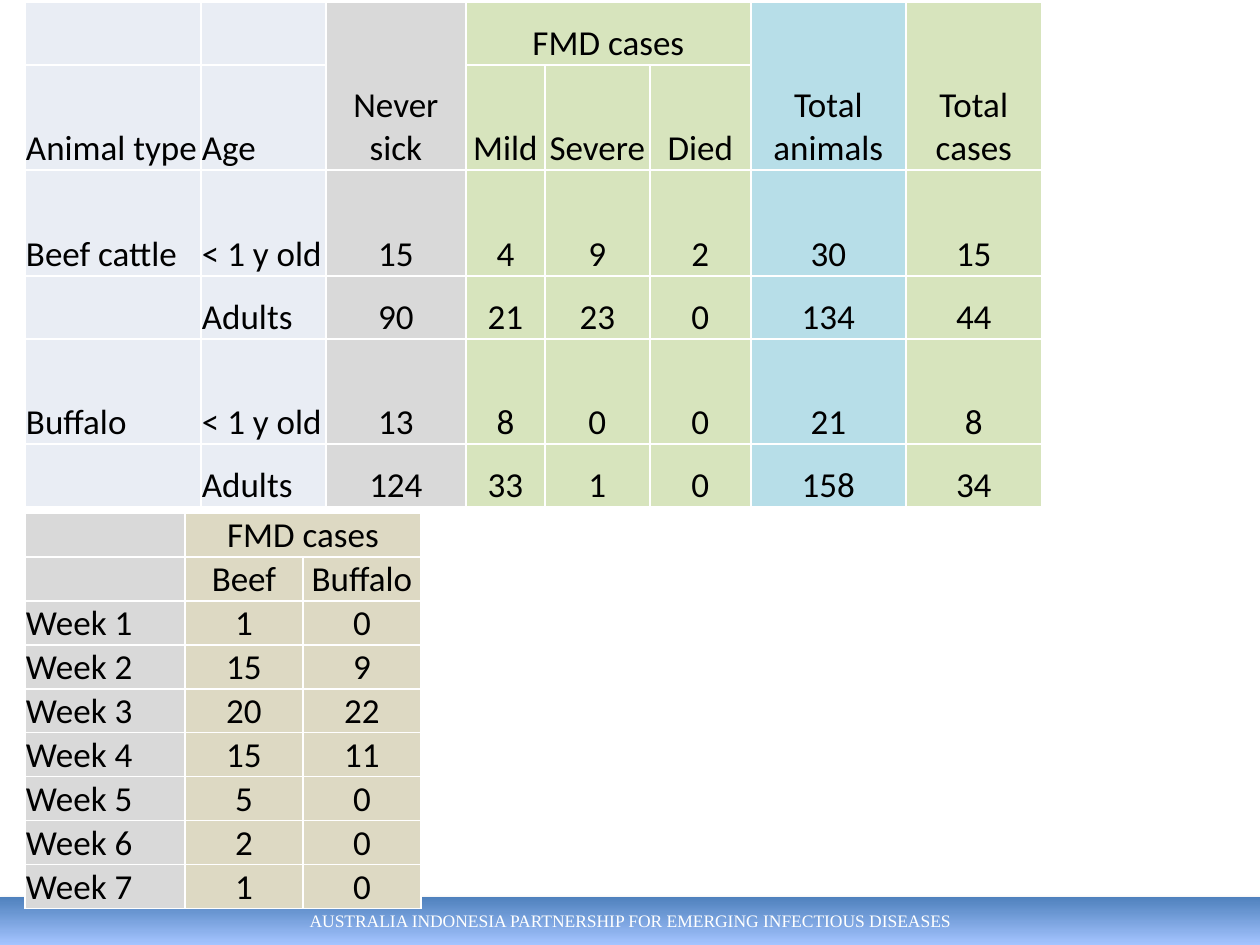
from lxml import etree
from pptx import Presentation
from pptx.dml.color import RGBColor
from pptx.enum.shapes import MSO_SHAPE
from pptx.enum.text import MSO_ANCHOR, PP_ALIGN
from pptx.oxml.ns import qn
from pptx.util import Pt

RECT = MSO_SHAPE.RECTANGLE
LOW, MID = MSO_ANCHOR.BOTTOM, MSO_ANCHOR.MIDDLE
LEFT, MIDDLE = PP_ALIGN.LEFT, PP_ALIGN.CENTER

BLACK = RGBColor(0x00, 0x00, 0x00)
WHITE = RGBColor(0xFF, 0xFF, 0xFF)
PALE = RGBColor(0xE9, 0xED, 0xF4)
GREY = RGBColor(0xD9, 0xD9, 0xD9)
GREEN = RGBColor(0xD7, 0xE4, 0xBD)
AQUA = RGBColor(0xB7, 0xDE, 0xE8)
TAN = RGBColor(0xDD, 0xD9, 0xC3)
BLUE = RGBColor(0x4F, 0x81, 0xBD)
SKY = RGBColor(0xA4, 0xC4, 0xFF)

FOOTER = "AUSTRALIA INDONESIA PARTNERSHIP FOR EMERGING INFECTIOUS DISEASES"

HERD = {
    "place": (25, 2),
    "cols": [176, 125, 140, 79, 105, 101, 155, 136],
    "rows": [63, 105, 106, 63, 105, 63],
    "fills": [PALE, PALE, GREY, GREEN, GREEN, GREEN, AQUA, GREEN],
    "labels": 2,
    "merges": [(0, 2, 1, 2), (0, 3, 0, 5), (0, 6, 1, 6), (0, 7, 1, 7)],
    "cells": [
        ["", "", "Never sick", "FMD cases", "", "", "Total animals", "Total cases"],
        ["Animal type", "Age", "", "Mild", "Severe", "Died", "", ""],
        ["Beef cattle", "< 1 y old", 15, 4, 9, 2, 30, 15],
        ["", "Adults", 90, 21, 23, 0, 134, 44],
        ["Buffalo", "< 1 y old", 13, 8, 0, 0, 21, 8],
        ["", "Adults", 124, 33, 1, 0, 158, 34],
    ],
}

WEEKS = [(1, 0), (15, 9), (20, 22), (15, 11), (5, 0), (2, 0), (1, 0)]
WEEKLY = {
    "place": (25, 513),
    "cols": [160, 118, 118],
    "rows": [44] * (len(WEEKS) + 2),
    "fills": [GREY, TAN, TAN],
    "labels": 1,
    "merges": [(0, 1, 0, 2)],
    "cells": [["", "FMD cases", ""], ["", "Beef", "Buffalo"]]
    + [[f"Week {n}", *pair] for n, pair in enumerate(WEEKS, 1)],
}


def px(n):
    return round(n * 914400 / 126)


def set_font(para, name, size, color):
    para.font.name = name
    para.font.size = Pt(size)
    para.font.color.rgb = color


def add_edges(cell):
    props = cell._tc.get_or_add_tcPr()
    for spot, side in enumerate(("lnL", "lnR", "lnT", "lnB")):
        line = etree.Element(qn(f"a:{side}"), w=str(Pt(1)))
        fill = etree.SubElement(line, qn("a:solidFill"))
        etree.SubElement(fill, qn("a:srgbClr"), val=str(WHITE))
        props.insert(spot, line)


def style_cell(cell, text, fill, align):
    cell.fill.solid()
    cell.fill.fore_color.rgb = fill
    cell.vertical_anchor = LOW
    cell.margin_left = cell.margin_right = cell.margin_top = px(1)
    cell.margin_bottom = 0
    cell.text = str(text)
    para = cell.text_frame.paragraphs[0]
    para.alignment = align
    set_font(para, "Calibri", 20, BLACK)
    add_edges(cell)


def add_grid(slide, data):
    cols, rows = data["cols"], data["rows"]
    box = (*data["place"], sum(cols), sum(rows))
    table = slide.shapes.add_table(len(rows), len(cols), *map(px, box)).table
    table.first_row = table.horz_banding = False
    for col, width in zip(table.columns, cols):
        col.width = px(width)
    for row, height in zip(table.rows, rows):
        row.height = px(height)
    for r, line in enumerate(data["cells"]):
        for c, text in enumerate(line):
            align = LEFT if c < data["labels"] else MIDDLE
            style_cell(table.cell(r, c), text, data["fills"][c], align)
    for top, left, low, right in data["merges"]:
        table.cell(top, left).merge(table.cell(low, right))


def add_footer(slide):
    bar = slide.shapes.add_shape(RECT, 0, px(897), px(1260), px(48))
    bar.fill.gradient()
    bar.fill.gradient_angle = 270
    for stop, color, spot in zip(bar.fill.gradient_stops, (BLUE, SKY), (0, 1)):
        stop.color.rgb = color
        stop.position = spot
    bar.line.fill.background()
    bar.shadow.inherit = False
    effects = bar._element.spPr.find(qn("a:effectLst"))
    shade = etree.SubElement(effects, qn("a:outerShdw"), blurRad=str(Pt(3.1)),
                             dist=str(Pt(1.8)), dir="5400000", rotWithShape="0")
    tint = etree.SubElement(shade, qn("a:srgbClr"), val=str(BLACK))
    etree.SubElement(tint, qn("a:alpha"), val="35000")
    frame = bar.text_frame
    frame.vertical_anchor = MID
    frame.text = FOOTER
    para = frame.paragraphs[0]
    para.alignment = MIDDLE
    set_font(para, "Times New Roman", 10, WHITE)


def main():
    deck = Presentation()
    deck.slide_width, deck.slide_height = px(1260), px(945)
    slide = deck.slides.add_slide(deck.slide_layouts[6])
    add_footer(slide)
    for data in (HERD, WEEKLY):
        add_grid(slide, data)
    deck.save("out.pptx")


if __name__ == "__main__":
    main()
